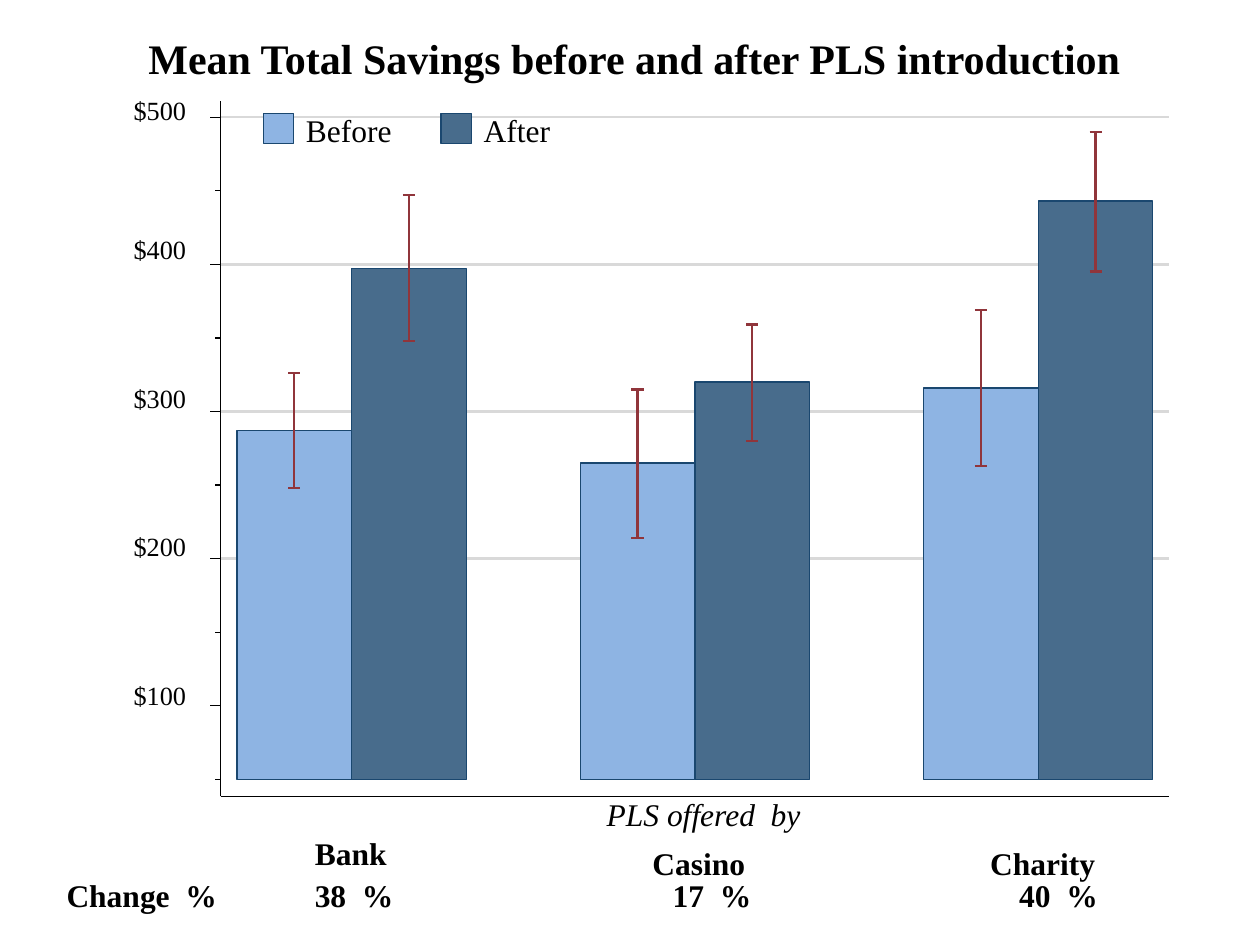
import dataclasses
import typing

import lxml.etree
import pptx
import pptx.dml.color
import pptx.enum.shapes
import pptx.enum.text
import pptx.oxml.ns
import pptx.util

COLS, ROWS = 100, 75
LEFT, RIGHT, TOP, BASE = 17.5, 92.8, 8, 63.2
HIGH, LOW, PITCH = 500, 50, 11.68
BAR, STEP, FIRST = 9.1, 27.25, 18.8
CAP = 0.48

Align = pptx.enum.text.PP_ALIGN
Fit = pptx.enum.text.MSO_AUTO_SIZE


@dataclasses.dataclass(frozen=True)
class Theme:
    font: str = "Times New Roman"
    ink: str = "000000"
    paper: str = "FFFFFF"
    grid: str = "D9D9D9"
    edge: str = "1A476F"
    error: str = "90353B"
    before: str = "8EB4E3"
    after: str = "486C8C"
    title: float = 24
    body: float = 18
    tick: float = 15
    thin: float = 0.75
    thick: float = 1.38


@dataclasses.dataclass(frozen=True)
class Box:
    x: float
    y: float
    w: float
    h: float


@dataclasses.dataclass(frozen=True)
class Bar:
    mean: float
    low: float
    high: float


@dataclasses.dataclass(frozen=True)
class Group:
    name: str
    label: Box
    before: Bar
    after: Bar
    change: str
    left: float


@dataclasses.dataclass(frozen=True)
class Key:
    name: str
    x: float
    color: str


THEME = Theme()
GROUPS = [
    Group("Bank", Box(24, 65.7, 10.2, 4), Bar(287, 248, 326), Bar(397, 348, 447), "38  %", 24),
    Group("Casino", Box(50.8, 66.5, 10.2, 4), Bar(265, 214, 315), Bar(320, 280, 359), "17  %", 52.4),
    Group("Charity", Box(77.6, 66.5, 11.8, 4), Bar(316, 263, 369), Bar(443, 395, 490), "40  %", 79.9),
]
KEYS = [Key("Before", 20.9, THEME.before), Key("After", 35, THEME.after)]
TICKS = {100: 53.9, 200: 42.1, 300: 30.3, 400: 18.5, 500: 7.5}

deck = pptx.Presentation()
deck.slide_width = pptx.util.Inches(10)
deck.slide_height = pptx.util.Inches(7.5)


def col(n: float) -> int:
    return round(deck.slide_width * n / COLS)


def row(n: float) -> int:
    return round(deck.slide_height * n / ROWS)


def rgb(code: str) -> pptx.dml.color.RGBColor:
    return pptx.dml.color.RGBColor.from_string(code)


def level(value: float) -> float:
    return TOP + 1.3 + (HIGH - value) / 100 * PITCH


def apply(item: typing.Any, form: dict[str, typing.Any]) -> None:
    for name, value in form.items():
        setattr(item, name, value)


def place(box: Box) -> tuple[int, int, int, int]:
    return col(box.x), row(box.y), col(box.w), row(box.h)


def rect(shapes: typing.Any, box: Box, fill: str, edge: str, width: float = 0) -> None:
    shape = shapes.add_shape(pptx.enum.shapes.MSO_SHAPE.RECTANGLE, *place(box))
    shape.shadow.inherit = False
    shape.fill.solid()
    shape.fill.fore_color.rgb = rgb(fill)
    shape.line.color.rgb = rgb(edge)
    shape.line.width = pptx.util.Pt(width)


def line(shapes: typing.Any, x: float, y: float, to_x: float, to_y: float,
         color: str, width: float) -> None:
    link = shapes.add_connector(
        pptx.enum.shapes.MSO_CONNECTOR.STRAIGHT, col(x), row(y), col(to_x), row(to_y))
    link.line.color.rgb = rgb(color)
    link.line.width = pptx.util.Pt(width)
    lxml.etree.SubElement(link._element.spPr, pptx.oxml.ns.qn("a:effectLst"))


def write(frame: typing.Any, words: str, size: float, align: Align = Align.LEFT,
          wrap: bool = True, **form: typing.Any) -> None:
    apply(frame, {"word_wrap": wrap, "auto_size": Fit.SHAPE_TO_FIT_TEXT,
                  "vertical_anchor": pptx.enum.text.MSO_ANCHOR.TOP})
    para = frame.paragraphs[0]
    para.alignment = align
    run = para.add_run()
    run.text = words
    apply(run.font, {"name": THEME.font, "size": pptx.util.Pt(size), **form})
    run.font.color.rgb = rgb(THEME.ink)


def text(shapes: typing.Any, box: Box, words: str, size: float = THEME.body,
         **form: typing.Any) -> typing.Any:
    frame = shapes.add_textbox(*place(box)).text_frame
    write(frame, words, size, **form)
    return frame


def bar(shapes: typing.Any, x: float, data: Bar, fill: str) -> None:
    top = level(data.mean)
    rect(shapes, Box(x, top, BAR, level(LOW) - top), fill, THEME.edge)


def error(shapes: typing.Any, x: float, data: Bar) -> None:
    pen = THEME.error, THEME.thick
    low, high = level(data.low), level(data.high)
    line(shapes, x, high, x, low, *pen)
    for y in (low, high):
        line(shapes, x - CAP, y, x + CAP, y, *pen)


def axes(shapes: typing.Any) -> None:
    pen = THEME.ink, THEME.thin
    line(shapes, LEFT, BASE, LEFT, TOP, *pen)
    line(shapes, LEFT, BASE, RIGHT, BASE, *pen)
    for value in range(LOW, HIGH + 1, 50):
        size = 0.8 if value in TICKS else 0.4
        line(shapes, LEFT, level(value), LEFT - size, level(value), *pen)
    for value, y in TICKS.items():
        frame = text(shapes, Box(10.6, y, 4.2, 2.5), f"${value}", THEME.tick, wrap=False)
        apply(frame, {f"margin_{side}": 0 for side in ("left", "right", "top", "bottom")})


def chart(shapes: typing.Any) -> None:
    rect(shapes, Box(LEFT, TOP, RIGHT - LEFT, BASE - TOP), THEME.paper, THEME.paper, THEME.thin)
    for value in range(200, HIGH + 1, 100):
        line(shapes, LEFT, level(value), RIGHT, level(value), THEME.grid, THEME.thick)
    for place_no, group in enumerate(GROUPS):
        x = FIRST + place_no * STEP
        pairs = [(x + BAR, group.after, THEME.after), (x, group.before, THEME.before)]
        for start, data, fill in pairs:
            bar(shapes, start, data, fill)
        for start, data, _ in pairs:
            error(shapes, start + BAR / 2, data)
        text(shapes, group.label, group.name, bold=True)
    axes(shapes)
    text(shapes, Box(28.7, 62.6, 54.3, 4), "PLS offered  by", align=Align.CENTER, italic=True)
    for key in KEYS:
        rect(shapes, Box(key.x, 9, 2.4, 2.4), key.color, THEME.edge)
        text(shapes, Box(key.x + 2.4, 8.3, 10.2, 4), key.name)


def main() -> None:
    slide = deck.slides.add_slide(deck.slide_layouts[5])
    title = slide.shapes.title
    apply(title, dict(zip(("left", "top", "width", "height"), place(Box(4.3, 2.1, 92.1, 5)))))
    write(title.text_frame, "Mean Total Savings before and after PLS introduction",
          THEME.title, Align.CENTER, bold=True)
    chart(slide.shapes.add_group_shape().shapes)
    text(slide.shapes, Box(4.3, 69, 14.7, 4), "Change  %", wrap=False, bold=True)
    for group in GROUPS:
        text(slide.shapes, Box(group.left, 69, 9, 4), group.change, bold=True)
    deck.save("out.pptx")


if __name__ == "__main__":
    main()
